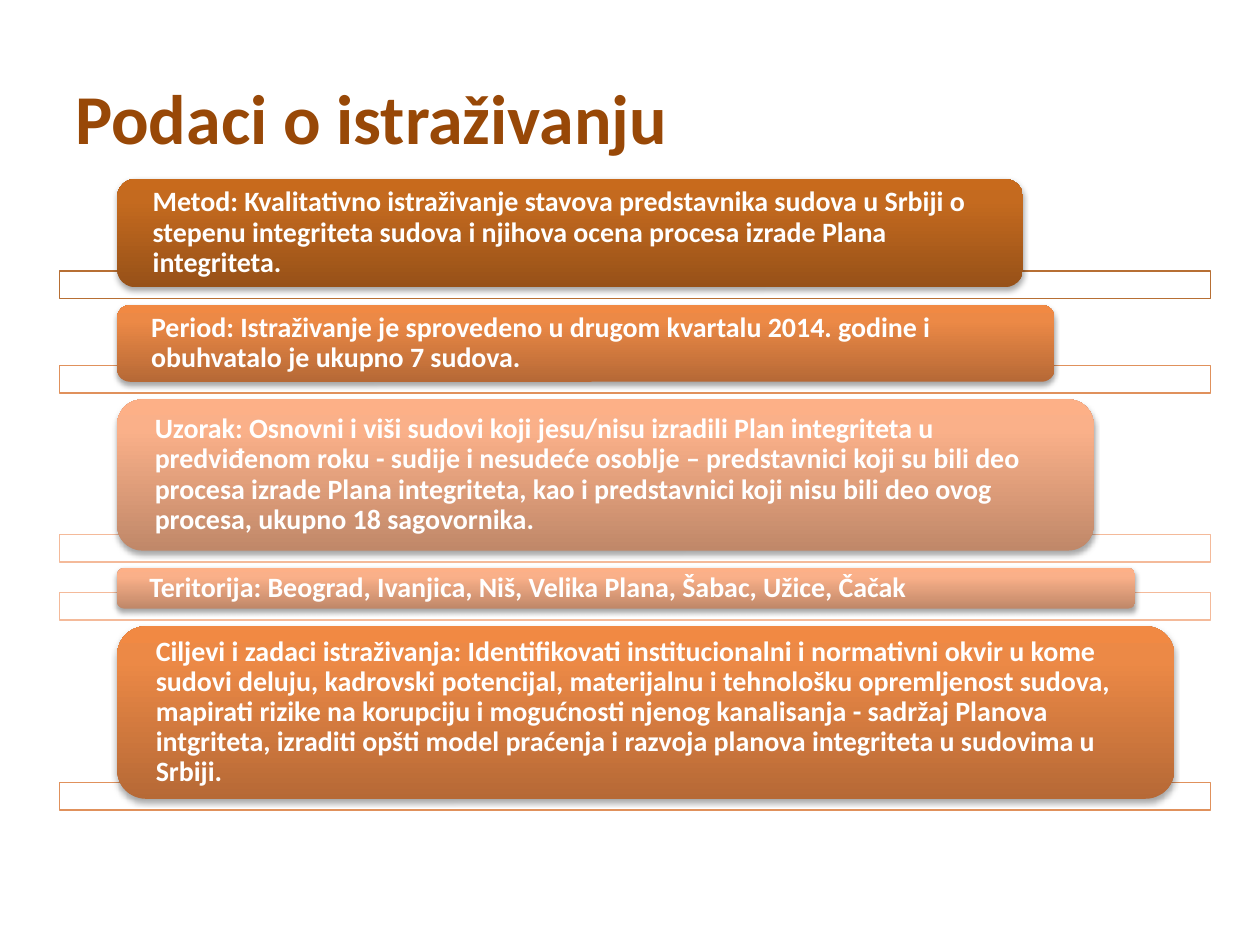
from copy import deepcopy

from lxml.etree import SubElement
from pptx import Presentation
from pptx.dml.color import RGBColor
from pptx.enum.shapes import MSO_SHAPE as Shape
from pptx.enum.text import MSO_ANCHOR as Anchor, PP_ALIGN as Align
from pptx.oxml.ns import qn
from pptx.util import Inches, Pt

COLORS = {"title": "984807", "white": "FFFFFF", "shadow": "000000"}
TONES = {  # outline of the bar, then gradient from bottom to top
    "dark": ("B76F34", ("975118", "C46A1F", "C86A1C")),
    "middle": ("E0915C", ("B66936", "EC8946", "F18943")),
    "light": ("F4BA9A", ("C08869", "FAB089", "FDB087")),
}
GRADIENT_STOPS = (0, 0.8, 1)
BAR_HEIGHT, BAR_OVERLAP, BAR_GAP = 0.22, 0.13, 0.05
CARD_INDENT = 0.46

# tone, card width, card height, text
ITEMS = [
    ("dark", 7.19, 0.86,
     "Metod: Kvalitativno istraživanje stavova predstavnika sudova u Srbiji o "
     "stepenu integriteta sudova i njihova ocena procesa izrade Plana integriteta."),
    ("middle", 7.44, 0.61,
     "Period: Istraživanje je sprovedeno u drugom kvartalu 2014. godine i "
     "obuhvatalo je ukupno 7 sudova."),
    ("light", 7.75, 1.2,
     "Uzorak: Osnovni i viši sudovi koji jesu/nisu izradili Plan integriteta u "
     "predviđenom roku - sudije i nesudeće osoblje – predstavnici koji su bili deo "
     "procesa izrade Plana integriteta, kao i predstavnici koji nisu bili deo ovog "
     "procesa, ukupno 18 sagovornika."),
    ("light", 8.08, 0.32,
     "Teritorija: Beograd, Ivanjica, Niš, Velika Plana, Šabac, Užice, Čačak"),
    ("middle", 8.39, 1.37,
     "Ciljevi i zadaci istraživanja: Identifikovati institucionalni i normativni "
     "okvir u kome sudovi deluju, kadrovski potencijal, materijalnu i tehnološku "
     "opremljenost sudova, mapirati rizike na korupciju i mogućnosti njenog "
     "kanalisanja - sadržaj Planova intgriteta, izraditi opšti model praćenja i "
     "razvoja planova integriteta u sudovima u Srbiji."),
]


def rgb(color):
    return RGBColor.from_string(color)


def write(shape, text, size, color):
    frame = shape.text_frame
    frame.word_wrap = True
    frame.vertical_anchor = Anchor.MIDDLE
    frame.text = text
    para = frame.paragraphs[0]
    para.alignment = Align.LEFT
    font = para.runs[0].font
    font.name, font.size, font.bold = "Calibri", Pt(size), True
    font.color.rgb = rgb(color)
    return frame, para


def fill_gradient(shape, colors):
    shape.fill.gradient()
    shape.fill.gradient_angle = 90
    stop_list = shape._element.spPr.find(".//" + qn("a:gsLst"))
    stop_list.insert(1, deepcopy(stop_list[0]))
    for stop, position, color in zip(shape.fill.gradient_stops, GRADIENT_STOPS, colors):
        stop.position = position
        stop.color.rgb = rgb(color)


def add_shadow(shape):
    shape.shadow.inherit = False
    effects = shape._element.spPr.find(qn("a:effectLst"))
    outer = SubElement(effects, qn("a:outerShdw"), blurRad=str(Pt(3.1)),
                       dist=str(Pt(1.8)), dir="5400000", rotWithShape="0")
    color = SubElement(outer, qn("a:srgbClr"), val=COLORS["shadow"])
    SubElement(color, qn("a:alpha"), val="35000")


def add_title(page, left, top, width, height):
    box = page.shapes.add_textbox(Inches(left), Inches(top), Inches(width), Inches(height))
    write(box, "Podaci o istraživanju", 40, COLORS["title"])


def add_bar(page, left, top, width, line_color):
    bar = page.shapes.add_shape(Shape.RECTANGLE, Inches(left), Inches(top),
                                Inches(width), Inches(BAR_HEIGHT))
    bar.shadow.inherit = False
    bar.fill.solid()
    bar.fill.fore_color.rgb = rgb(COLORS["white"])
    color = bar._element.spPr.find(qn("a:solidFill"))[0]
    SubElement(color, qn("a:alpha"), val="90000")
    bar.line.color.rgb = rgb(line_color)
    bar.line.width = Pt(0.75)


def add_card(page, left, top, width, height, colors, text):
    card = page.shapes.add_shape(Shape.ROUNDED_RECTANGLE, Inches(left), Inches(top),
                                 Inches(width), Inches(height))
    fill_gradient(card, colors)
    card.line.fill.background()
    add_shadow(card)
    frame, para = write(card, text, 16, COLORS["white"])
    frame.margin_left = frame.margin_right = Inches(0.24)
    frame.margin_top = frame.margin_bottom = 0
    para.line_spacing = 0.9


def add_list(page, left, top, width):
    """Stack the cards, each one overlapping the bar at its foot."""
    for tone, card_width, card_height, text in ITEMS:
        line_color, gradient = TONES[tone]
        bar_top = top + card_height - BAR_OVERLAP
        add_bar(page, left, bar_top, width, line_color)
        add_card(page, left + CARD_INDENT, top, card_width, card_height, gradient, text)
        top = bar_top + BAR_HEIGHT + BAR_GAP


def main():
    deck = Presentation()
    deck.slide_width, deck.slide_height = Inches(10), Inches(7.5)
    page = deck.slides.add_slide(deck.slide_layouts[6])
    add_title(page, 0.5, 0.3, 9, 1.25)
    add_list(page, 0.47, 1.42, 9.14)
    deck.save("out.pptx")


if __name__ == "__main__":
    main()
